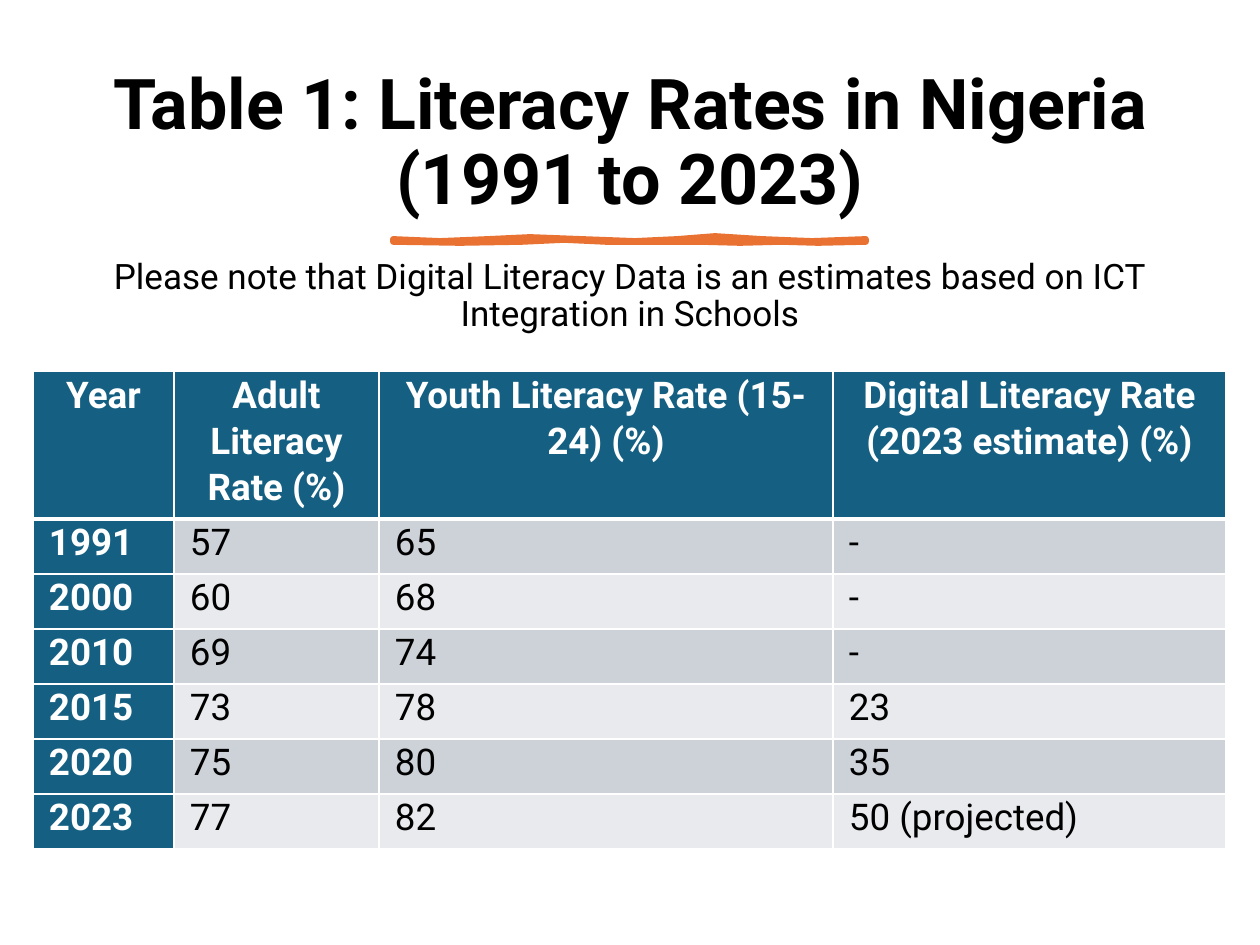
from pptx import Presentation
from pptx.dml.color import RGBColor
from pptx.enum.text import MSO_ANCHOR, PP_ALIGN
from pptx.oxml import parse_xml
from pptx.oxml.ns import nsdecls
from pptx.util import Pt

TITLE = "Table 1: Literacy Rates in Nigeria (1991 to 2023)"
NOTE = "Please note that Digital Literacy Data is an estimates based on ICT Integration in Schools"
ROWS = [
    ("Year", "Adult Literacy Rate (%)", "Youth Literacy Rate (15-24) (%)",
     "Digital Literacy Rate (2023 estimate) (%)"),
    ("1991", "57", "65", "-"),
    ("2000", "60", "68", "-"),
    ("2010", "69", "74", "-"),
    ("2015", "73", "78", "23"),
    ("2020", "75", "80", "35"),
    ("2023", "77", "82", "50 (projected)"),
]
COLS = [141, 205, 454, 393]
HEAD, BODY = 148, 55
WAVE = [(393, 239), (440, 241), (488, 239), (530, 237), (582, 239), (635, 241),
        (677, 239), (715, 236), (762, 239), (812, 241), (866, 239),
        (866, 242), (818, 243), (781, 242), (740, 243), (700, 242), (650, 242),
        (606, 242), (564, 240), (522, 242), (460, 243), (393, 242)]
FONT = "Roboto"
BLACK, WHITE, TEAL, ORANGE = "000000", "FFFFFF", "156082", "E97132"
BANDS = ["E8EAED", "CCD2D8"]
SCALE = 914400 / 126


def px(n):
    return round(n * SCALE)


def color(code):
    return RGBColor.from_string(code)


def write(frame, text, size, code, bold=False, align=PP_ALIGN.CENTER,
          line=0.9, before=0, after=0):
    frame.word_wrap = True
    frame.text = text
    para = frame.paragraphs[0]
    para.alignment = align
    para.line_spacing = line
    para.space_before, para.space_after = Pt(before), Pt(after)
    font = para.runs[0].font
    font.name, font.size, font.bold = FONT, Pt(size), bold
    font.color.rgb = color(code)


def label(slide, box, text, size, **style):
    frame = slide.shapes.add_textbox(*map(px, box)).text_frame
    frame.vertical_anchor = MSO_ANCHOR.MIDDLE
    write(frame, text, size, BLACK, **style)


def border(cell, sides):
    props = cell._tc.get_or_add_tcPr()
    for spot, (side, width) in enumerate(sides.items()):
        props.insert(spot, parse_xml(
            f'<a:ln{side} {nsdecls("a")} w="{Pt(width)}"><a:solidFill>'
            f'<a:srgbClr val="{WHITE}"/></a:solidFill></a:ln{side}>'))


def underline(slide):
    build = slide.shapes.build_freeform(*WAVE[0], scale=SCALE)
    build.add_line_segments(WAVE[1:], close=True)
    shape = build.convert_to_shape()
    shape.shadow.inherit = False
    shape.fill.solid()
    shape.fill.fore_color.rgb = color(ORANGE)
    shape.line.color.rgb = color(ORANGE)
    shape.line.width = Pt(3.25)


def grid(slide):
    highs = [HEAD] + [BODY] * (len(ROWS) - 1)
    box = (33, 371, sum(COLS), sum(highs))
    table = slide.shapes.add_table(len(ROWS), len(COLS), *map(px, box)).table
    for col, wide in zip(table.columns, COLS):
        col.width = px(wide)
    for r, (row, high) in enumerate(zip(ROWS, highs)):
        table.rows[r].height = px(high)
        for c, text in enumerate(row):
            cell = table.cell(r, c)
            dark = r == 0 or c == 0
            cell.margin_left = cell.margin_right = px(16)
            cell.margin_top = cell.margin_bottom = 0
            cell.fill.solid()
            cell.fill.fore_color.rgb = color(TEAL if dark else BANDS[r % 2])
            align = PP_ALIGN.LEFT if r else PP_ALIGN.CENTER
            write(cell.text_frame, text, 21, WHITE if dark else BLACK,
                  bold=dark, align=align, line=1.07, after=8)
            border(cell, {"L": 1, "R": 1, "T": 3 if r == 1 else 1,
                          "B": 1 if r else 3})


def main():
    deck = Presentation()
    deck.slide_width, deck.slide_height = px(1260), px(945)
    slide = deck.slides.add_slide(deck.slide_layouts[6])
    label(slide, (66, 58, 1128, 173), TITLE, 40, bold=True, after=8)
    label(slide, (66, 249, 1128, 95), NOTE, 20, before=10)
    underline(slide)
    grid(slide)
    deck.save("out.pptx")


if __name__ == "__main__":
    main()
